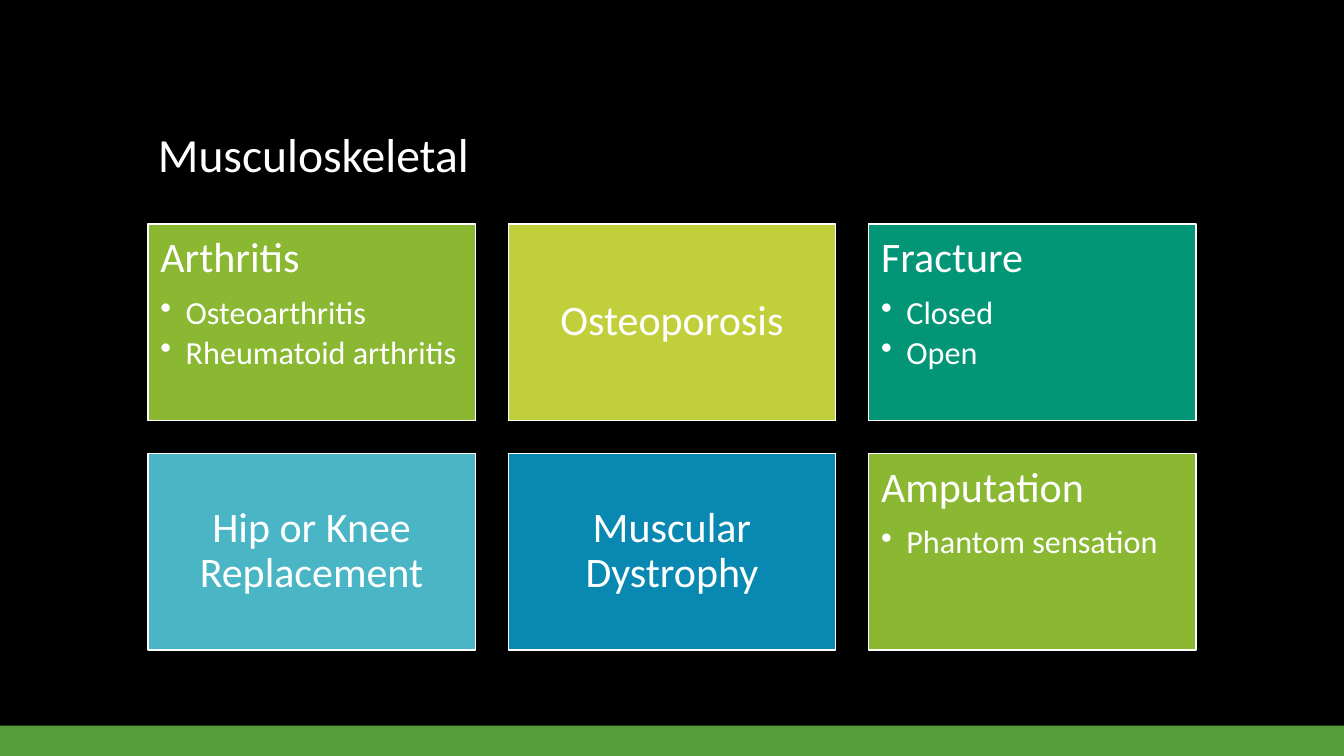
from lxml import etree
from pptx import Presentation
from pptx.dml.color import RGBColor
from pptx.enum.shapes import MSO_SHAPE
from pptx.enum.text import MSO_ANCHOR, MSO_AUTO_SIZE, PP_ALIGN
from pptx.oxml.ns import qn
from pptx.util import Pt

BLACK = RGBColor(0x00, 0x00, 0x00)
WHITE = RGBColor(0xFF, 0xFF, 0xFF)
GREEN = RGBColor(0x54, 0x9E, 0x39)
LEAF = RGBColor(0x8A, 0xB8, 0x33)
LIME = RGBColor(0xC0, 0xCF, 0x3A)
TEAL = RGBColor(0x02, 0x96, 0x76)
AQUA = RGBColor(0x4A, 0xB5, 0xC4)
BLUE = RGBColor(0x09, 0x89, 0xB1)

SLIDE_WIDTH, SLIDE_HEIGHT = 960, 540
COLUMNS, GAP = 3, 23.4
TILE_HEIGHT = 140.4

# Heading, fill, bulleted details
CONDITIONS = [
    ("Arthritis", LEAF, ["Osteoarthritis", "Rheumatoid arthritis"]),
    ("Osteoporosis", LIME, []),
    ("Fracture", TEAL, ["Closed", "Open"]),
    ("Hip or Knee Replacement", AQUA, []),
    ("Muscular Dystrophy", BLUE, []),
    ("Amputation", LEAF, ["Phantom sensation"]),
]


def set_attributes(target, values):
    for name, value in values.items():
        setattr(target, name, value)


def write_paragraph(paragraph, text, size, **layout):
    paragraph.text = text
    set_attributes(paragraph, {"line_spacing": 0.9, "space_before": Pt(0), **layout})
    set_attributes(paragraph.font, {"name": "Calibri", "size": Pt(size)})
    paragraph.font.color.rgb = WHITE


def add_bullet(paragraph):
    properties = paragraph._p.get_or_add_pPr()
    properties.set("marL", str(Pt(18)))
    properties.set("indent", str(Pt(-18)))
    etree.SubElement(properties, qn("a:buChar")).set("char", "•")


def add_block(slide, left, top, width, height, color):
    block = slide.shapes.add_shape(
        MSO_SHAPE.RECTANGLE, Pt(left), Pt(top), Pt(width), Pt(height))
    block.shadow.inherit = False
    block.fill.solid()
    block.fill.fore_color.rgb = color
    return block


def add_footer_band(slide, left, top, width, height):
    add_block(slide, left, top, width, height, GREEN).line.fill.background()


def place_title(slide, left, top, width, height, text):
    title = slide.shapes.title
    set_attributes(title, {"left": Pt(left), "top": Pt(top),
                           "width": Pt(width), "height": Pt(height)})
    set_attributes(title.text_frame, {"vertical_anchor": MSO_ANCHOR.BOTTOM,
                                      "auto_size": MSO_AUTO_SIZE.NONE,
                                      "word_wrap": True})
    write_paragraph(title.text_frame.paragraphs[0], text, 34,
                    alignment=PP_ALIGN.LEFT)


def add_condition(slide, left, top, width, height, heading, color, details):
    tile = add_block(slide, left, top, width, height, color)
    tile.line.color.rgb = WHITE
    tile.line.width = Pt(1)
    frame = tile.text_frame
    inset = Pt(9)
    set_attributes(frame, {
        "margin_left": inset, "margin_right": inset,
        "margin_top": inset, "margin_bottom": inset, "word_wrap": True,
        "vertical_anchor": MSO_ANCHOR.TOP if details else MSO_ANCHOR.MIDDLE,
    })
    write_paragraph(frame.paragraphs[0], heading, 30, space_after=Pt(10.5),
                    alignment=PP_ALIGN.LEFT if details else PP_ALIGN.CENTER)
    for detail in details:
        paragraph = frame.add_paragraph()
        write_paragraph(paragraph, detail, 23, space_after=Pt(3.45),
                        alignment=PP_ALIGN.LEFT, level=1)
        add_bullet(paragraph)


def add_condition_grid(slide, left, top, width):
    tile_width = (width - GAP * (COLUMNS - 1)) / COLUMNS
    for index, condition in enumerate(CONDITIONS):
        row, column = divmod(index, COLUMNS)
        add_condition(slide, left + column * (tile_width + GAP),
                      top + row * (TILE_HEIGHT + GAP),
                      tile_width, TILE_HEIGHT, *condition)


def build_conditions_slide(deck):
    slide = deck.slides.add_slide(deck.slide_layouts[5])
    slide.background.fill.solid()
    slide.background.fill.fore_color.rgb = BLACK
    left, width = 105.6, 748.8
    add_footer_band(slide, 0, 518.4, SLIDE_WIDTH, SLIDE_HEIGHT - 518.4)
    place_title(slide, left, 36.7, width, 97.2, "Musculoskeletal")
    add_condition_grid(slide, left, 160, width)


def main():
    deck = Presentation()
    deck.slide_width, deck.slide_height = Pt(SLIDE_WIDTH), Pt(SLIDE_HEIGHT)
    build_conditions_slide(deck)
    deck.save("out.pptx")


if __name__ == "__main__":
    main()
